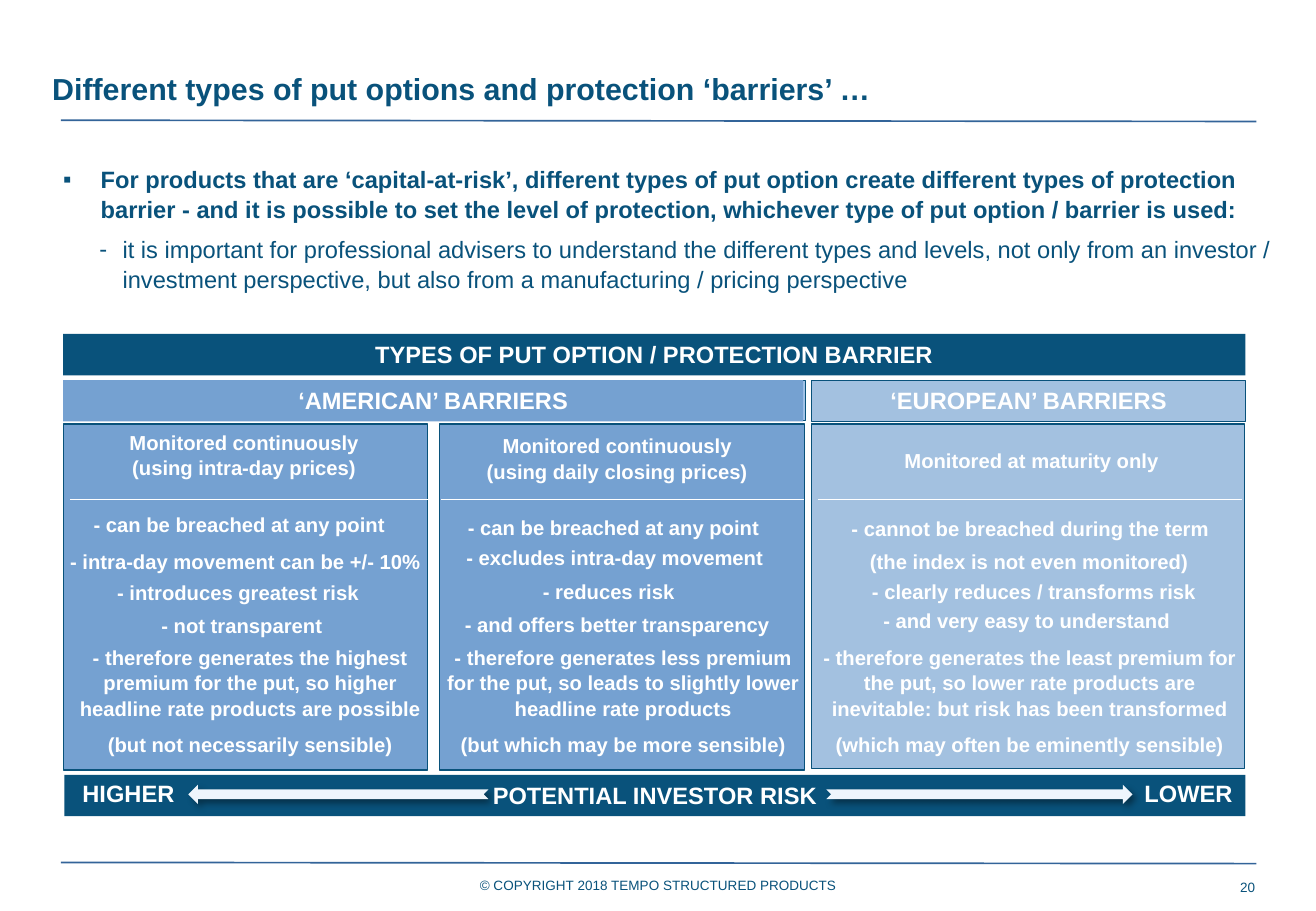
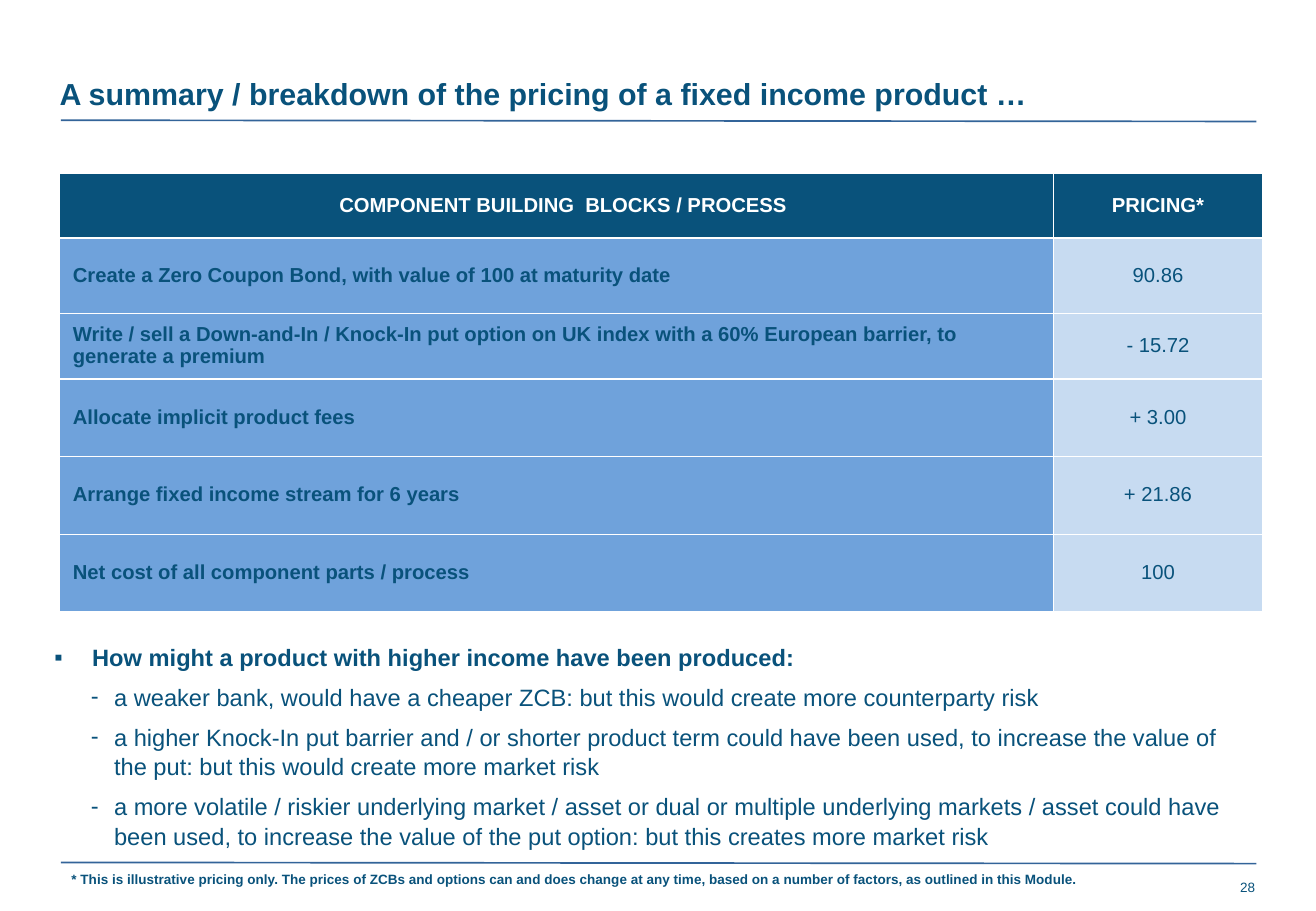
from dataclasses import dataclass
from typing import Any, NamedTuple, Sequence

from lxml import etree
from pptx import Presentation
from pptx.dml.color import RGBColor
from pptx.enum.shapes import MSO_CONNECTOR, MSO_SHAPE
from pptx.enum.text import MSO_ANCHOR, PP_ALIGN
from pptx.oxml.ns import qn
from pptx.util import Emu, Pt

SCALE = 9144
WIDE, HIGH = 1083, 750
RECT = MSO_SHAPE.RECTANGLE
ARROW = MSO_SHAPE.NOTCHED_RIGHT_ARROW
STRAIGHT = MSO_CONNECTOR.STRAIGHT
LEFT, MID, RIGHT = PP_ALIGN.LEFT, PP_ALIGN.CENTER, PP_ALIGN.RIGHT
TOP, CENTRE = MSO_ANCHOR.TOP, MSO_ANCHOR.MIDDLE

FONT = "Arial"
NAVY = "09527B"
STEEL = "336499"
BLUE = "75A1D1"
PALE = "A3C1E0"
BACK = "A4C4E8"
ROW = "6FA2DB"
PRICE = "C7DBF1"
ICE = "EEF5FC"
WHITE = "FFFFFF"


class Spot(NamedTuple):
    x: int
    y: int
    w: int
    h: int


class Note(NamedTuple):
    x: int
    y: int
    text: str


@dataclass(frozen=True)
class Column:
    spot: Spot
    fill: str
    head: Note
    rule: tuple[int, int]
    notes: tuple[Note, ...]
    end: Spot
    close: tuple[str, str]


@dataclass(frozen=True)
class Band:
    spot: Spot
    fill: str
    text: str = ""
    edge: str = ""


COLUMNS = (
    Column(
        Spot(52, 349, 300, 285), BLUE,
        Note(51, 348, "Monitored continuously\v(using intra-day prices)"),
        (58, 352),
        (
            Note(47, 416, "- can be breached at any point"),
            Note(52, 446, "- intra-day movement can be +/- 10%"),
            Note(46, 472, "- introduces greatest risk"),
            Note(49, 499, "- not transparent"),
        ),
        Spot(56, 525, 300, 101),
        ("- therefore generates the highest premium for the put, so higher "
         "headline rate products are possible",
         "(but not necessarily sensible)"),
    ),
    Column(
        Spot(362, 349, 300, 285), BLUE,
        Note(358, 351, "Monitored continuously\v(using daily closing prices)"),
        (363, 662),
        (
            Note(355, 418, "- can be breached at any point"),
            Note(356, 443, "- excludes intra-day movement"),
            Note(351, 471, "- reduces risk"),
            Note(358, 498, "- and offers better transparency"),
        ),
        Spot(363, 525, 300, 101),
        ("- therefore generates less premium for the put, so leads to "
         "slightly lower headline rate products",
         "(but which may be more sensible)"),
    ),
    Column(
        Spot(668, 349, 356, 284), PALE,
        Note(671, 363, "Monitored at maturity only"),
        (673, 1022),
        (
            Note(670, 419, "- cannot be breached during the term"),
            Note(669, 446, "(the index is not even monitored)"),
            Note(673, 471, "- clearly reduces / transforms risk"),
            Note(667, 495, "- and very easy to understand"),
        ),
        Spot(673, 525, 349, 101),
        ("- therefore generates the least premium for the put, so lower rate "
         "products are inevitable: but risk has been transformed",
         "(which may often be eminently sensible)"),
    ),
)

BANDS = (
    Band(Spot(52, 275, 973, 34), NAVY, "TYPES OF PUT OPTION / PROTECTION BARRIER"),
    Band(Spot(53, 313, 610, 33), BACK, edge=NAVY),
    Band(Spot(52, 313, 609, 34), BLUE, "‘AMERICAN’ BARRIERS"),
    Band(Spot(668, 313, 357, 34), PALE, "‘EUROPEAN’ BARRIERS", NAVY),
    Band(Spot(53, 638, 972, 34), NAVY, "POTENTIAL INVESTOR RISK"),
)

POINTS = (
    "For products that are ‘capital-at-risk’, different types of put option "
    "create different types of protection barrier - and it is possible to set "
    "the level of protection, whichever type of put option / barrier is used:",
    "it is important for professional advisers to understand the different "
    "types and levels, not only from an investor / investment perspective, but "
    "also from a manufacturing / pricing perspective",
)

CAUSES = (
    "How might a product with higher income have been produced:",
    "a weaker bank, would have a cheaper ZCB: but this would create more "
    "counterparty risk",
    "a higher Knock-In put barrier and / or shorter product term could have "
    "been used, to increase the value of the put: but this would create more "
    "market risk",
    "a more volatile / riskier underlying market / asset or dual or multiple "
    "underlying markets / asset could have been used, to increase the value of "
    "the put option: but this creates more market risk",
)

PRICES = (
    (53, ("COMPONENT BUILDING  BLOCKS / PROCESS",), "PRICING*"),
    (62, ("Create a Zero Coupon Bond, with value of 100 at maturity date",), "90.86"),
    (54, ("Write / sell a Down-and-In / Knock-In put option on UK index with a "
          "60% European barrier, to", "generate a premium"), "- 15.72"),
    (64, ("Allocate implicit product fees",), "+ 3.00"),
    (64, ("Arrange fixed income stream for 6 years",), "+ 21.86"),
    (64, ("Net cost of all component parts / process",), "100"),
)


def px(size: int) -> Emu:
    return Emu(size * SCALE)


def tint(code: str) -> RGBColor:
    return RGBColor.from_string(code)


def add(node: Any, tag: str, **attrs: str) -> Any:
    return etree.SubElement(node, qn(tag), attrs)


def write(frame: Any, lines: Sequence[str], *, size: int = 12,
          color: str = WHITE, bold: bool = True, align: Any = MID,
          gap: float = 0, lead: float = 1.05, marks: bool = False) -> None:
    for i, line in enumerate(lines):
        para = frame.add_paragraph() if i else frame.paragraphs[0]
        para.text = line
        para.alignment = align
        para.line_spacing = lead
        if i and gap:
            para.space_before = Pt(gap)
        if marks:
            para.level = min(i, 1)
            para.space_after = Pt(6)
            props = para._p.get_or_add_pPr()
            props.set("marL", str(px(49 if i else 31)))
            props.set("indent", str(px(-19 if i else -31)))
            add(props, "a:buFont", typeface=FONT)
            add(props, "a:buChar", char="-" if i else "▪")
        for run in para.runs:
            font = run.font
            font.name, font.size = FONT, Pt(size)
            font.bold = bold and not (marks and i)
            font.color.rgb = tint(color)
        for br in para._p.findall(qn("a:br")):
            add(br, "a:rPr", sz=str(size * 100))


def label(slide: Any, spot: Spot, lines: Sequence[str], *, side: int = 10,
          edge: int = 5, wrap: bool = True, anchor: Any = TOP,
          **style: Any) -> None:
    frame = slide.shapes.add_textbox(*map(px, spot)).text_frame
    frame.word_wrap = wrap
    frame.vertical_anchor = anchor
    frame.margin_left = frame.margin_right = px(side)
    frame.margin_top = frame.margin_bottom = px(edge)
    write(frame, lines, **style)


def block(slide: Any, spot: Spot, fill: str, edge: str = "",
          kind: Any = RECT) -> Any:
    shape = slide.shapes.add_shape(kind, *map(px, spot))
    shape.shadow.inherit = False
    shape.fill.solid()
    shape.fill.fore_color.rgb = tint(fill)
    if edge:
        shape.line.color.rgb = tint(edge)
        shape.line.width = Pt(0.75)
    else:
        shape.line.fill.background()
    shape.text_frame.vertical_anchor = TOP
    return shape


def rule(slide: Any, start: tuple[int, int], end: tuple[int, int],
         color: str, width: float) -> None:
    line = slide.shapes.add_connector(STRAIGHT, *map(px, start + end))
    line.line.color.rgb = tint(color)
    line.line.width = Pt(width)
    add(line._element.spPr, "a:effectLst")


def arrow(slide: Any, spot: Spot, flip: bool = False) -> None:
    props = block(slide, spot, ICE, kind=ARROW)._element.spPr
    if flip:
        props.find(qn("a:xfrm")).set("flipH", "1")
    shade = add(props.find(qn("a:effectLst")), "a:outerShdw",
                blurRad=str(Pt(4)), dist=str(Pt(3)), dir="2700000",
                algn="tl", rotWithShape="0")
    add(add(shade, "a:srgbClr", val="000000"), "a:alpha", val="40000")


def start(deck: Any, title: str, x: int, y: int, page: int) -> Any:
    slide = deck.slides.add_slide(deck.slide_layouts[6])
    for top in (99, 710):
        rule(slide, (50, top), (1034, top + 1), STEEL, 1)
    label(slide, Spot(x, y, 900, 30), [title], side=0, edge=0, size=18,
          color=NAVY, align=LEFT, lead=1)
    label(slide, Spot(965, 722, 68, 16), [str(page)], side=0, edge=0, size=8,
          color=NAVY, bold=False, align=RIGHT, anchor=CENTRE, lead=1)
    return slide


def stack(slide: Any, col: Column) -> None:
    block(slide, col.spot, col.fill, NAVY)
    wide = col.spot.w
    label(slide, Spot(col.head.x, col.head.y, wide, 50), [col.head.text])
    for note in col.notes:
        label(slide, Spot(note.x, note.y, wide, 30), [note.text], side=0)
    left, right = col.rule
    rule(slide, (left, 411), (right, 411), WHITE, 0.75)
    label(slide, col.end, col.close, side=0, gap=6.5)


def fill_cell(cell: Any, lines: Sequence[str], fill: str, left: int,
              **style: Any) -> None:
    cell.margin_left = px(left)
    cell.margin_right = cell.margin_top = cell.margin_bottom = 0
    cell.vertical_anchor = CENTRE
    props = cell._tc.get_or_add_tcPr()
    for side in ("a:lnL", "a:lnR", "a:lnT", "a:lnB"):
        line = add(props, side, w=str(Pt(1)))
        add(add(line, "a:solidFill"), "a:srgbClr", val=WHITE)
    cell.fill.solid()
    cell.fill.fore_color.rgb = tint(fill)
    write(cell.text_frame, lines, lead=0.95, **style)


def draw_types(deck: Any) -> None:
    slide = start(deck, "Different types of put options and protection ‘barriers’ …",
                  43, 58, 20)
    for col in COLUMNS:
        stack(slide, col)
    for band in BANDS:
        shape = block(slide, band.spot, band.fill, band.edge)
        if band.text:
            write(shape.text_frame, [band.text], size=14, lead=1)
    label(slide, Spot(42, 130, 1019, 113), POINTS, size=14, color=NAVY,
          align=LEFT, marks=True)
    arrow(slide, Spot(680, 646, 252, 16))
    arrow(slide, Spot(155, 646, 247, 16), flip=True)
    for x, w, text in ((58, 97, "HIGHER"), (932, 93, "LOWER")):
        label(slide, Spot(x, 636, w, 34), [text], wrap=False, size=14,
              align=LEFT, lead=1)
    label(slide, Spot(385, 717, 315, 24),
          ["© COPYRIGHT 2018 TEMPO STRUCTURED PRODUCTS"], wrap=False, size=8,
          color=NAVY, bold=False, align=LEFT, lead=1)


def draw_prices(deck: Any) -> None:
    slide = start(deck, "A summary / breakdown of the pricing of a fixed income product …",
                  49, 62, 28)
    spot = Spot(49, 143, 990, sum(row[0] for row in PRICES))
    table = slide.shapes.add_table(len(PRICES), 2, *map(px, spot)).table
    for i, wide in enumerate((818, 172)):
        table.columns[i].width = px(wide)
    for i, (high, step, price) in enumerate(PRICES):
        table.rows[i].height = px(high)
        ink = NAVY if i else WHITE
        fill_cell(table.cell(i, 0), step, ROW if i else NAVY, 11,
                  color=ink, align=LEFT if i else MID)
        fill_cell(table.cell(i, 1), [price], PRICE if i else NAVY, 0,
                  color=ink, bold=not i)
    label(slide, Spot(49, 712, 984, 24),
          ["* This is illustrative pricing only. The prices of ZCBs and options "
           "can and does change at any time, based on a number of factors, as "
           "outlined in this Module."], size=8, color=NAVY, align=LEFT, lead=1)
    shape = block(slide, Spot(35, 523, 999, 171), WHITE)
    write(shape.text_frame, CAUSES, size=14, color=NAVY, align=LEFT, marks=True)


def main() -> None:
    deck = Presentation()
    deck.slide_width, deck.slide_height = px(WIDE), px(HIGH)
    draw_types(deck)
    draw_prices(deck)
    deck.save("out.pptx")


if __name__ == "__main__":
    main()
